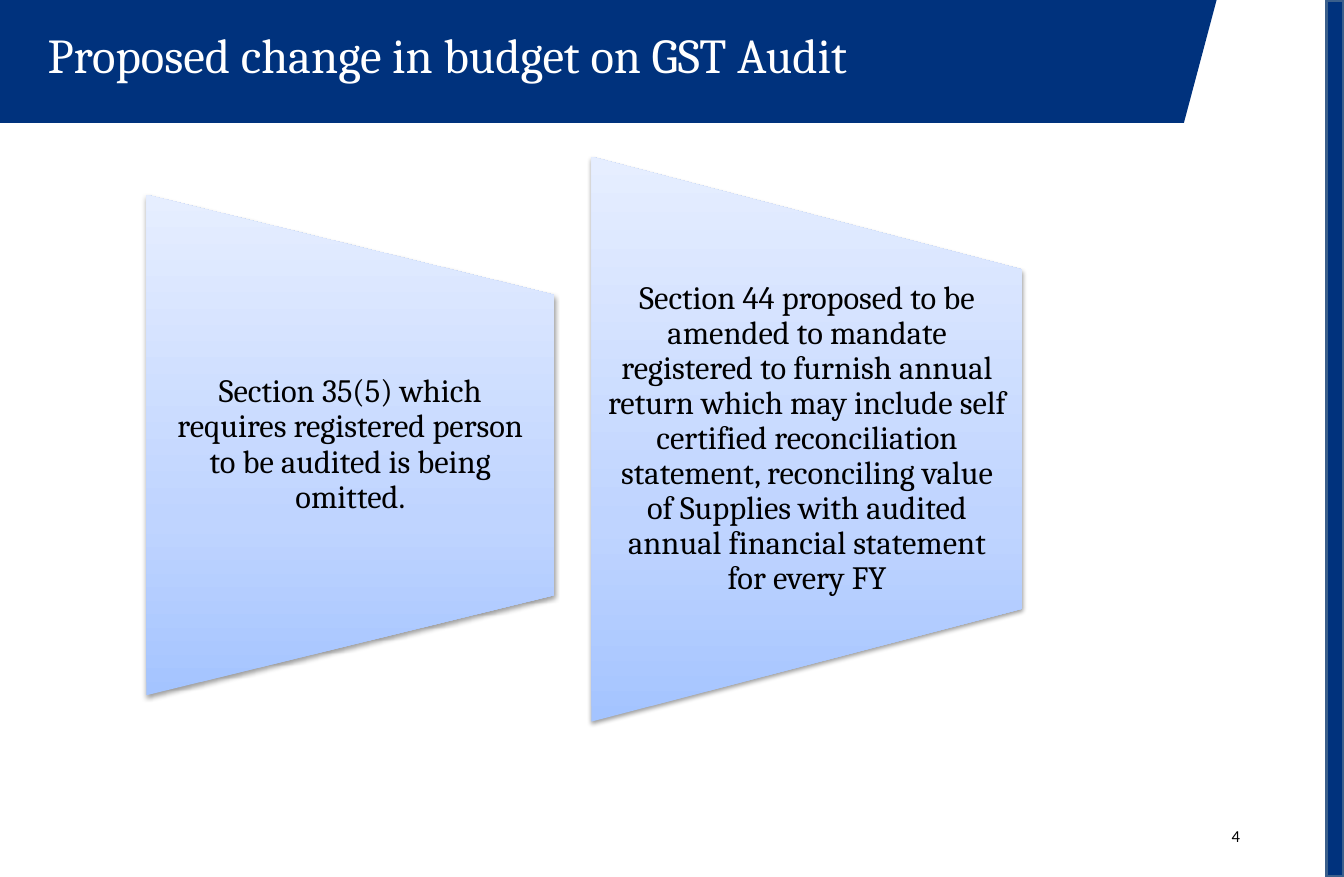
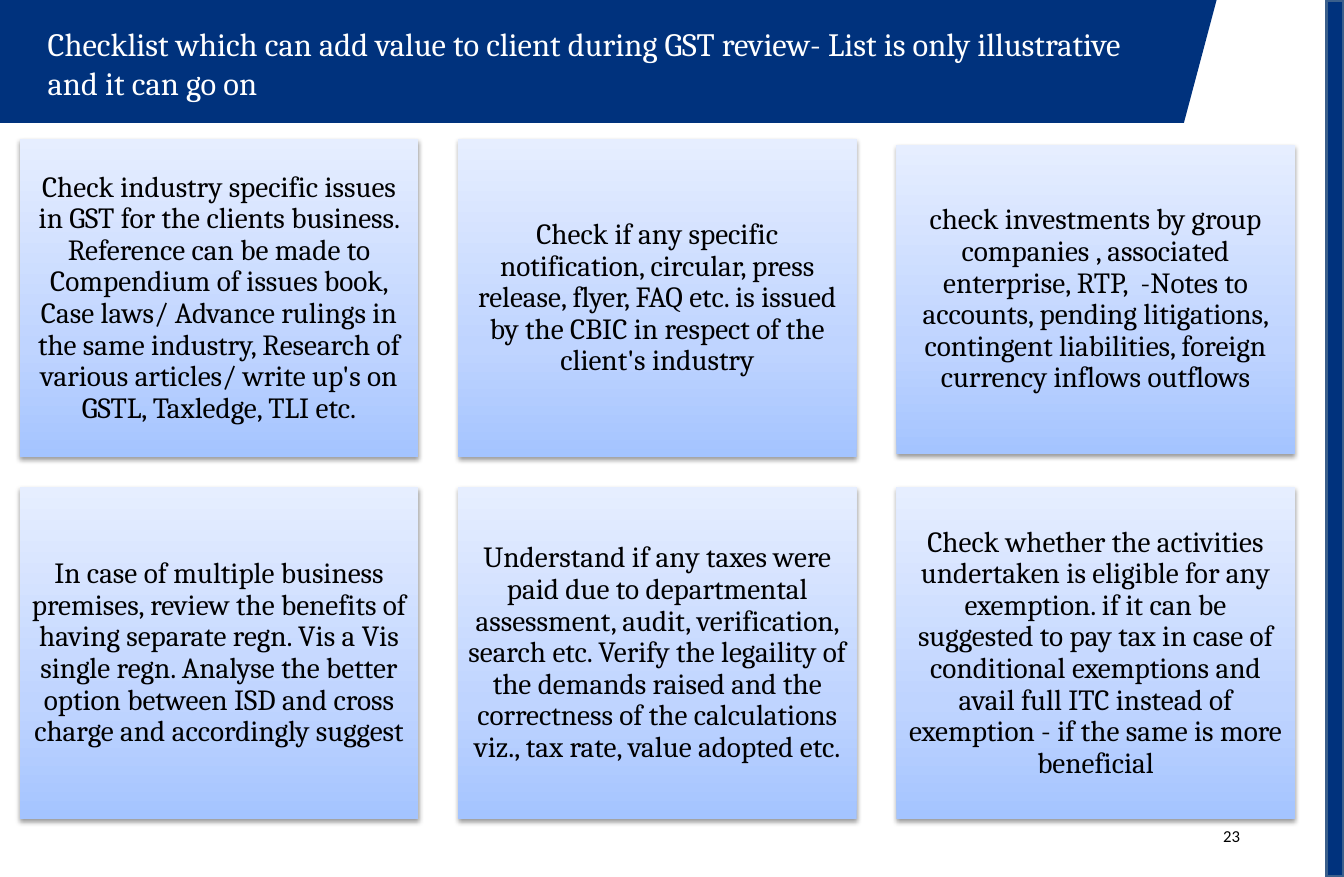
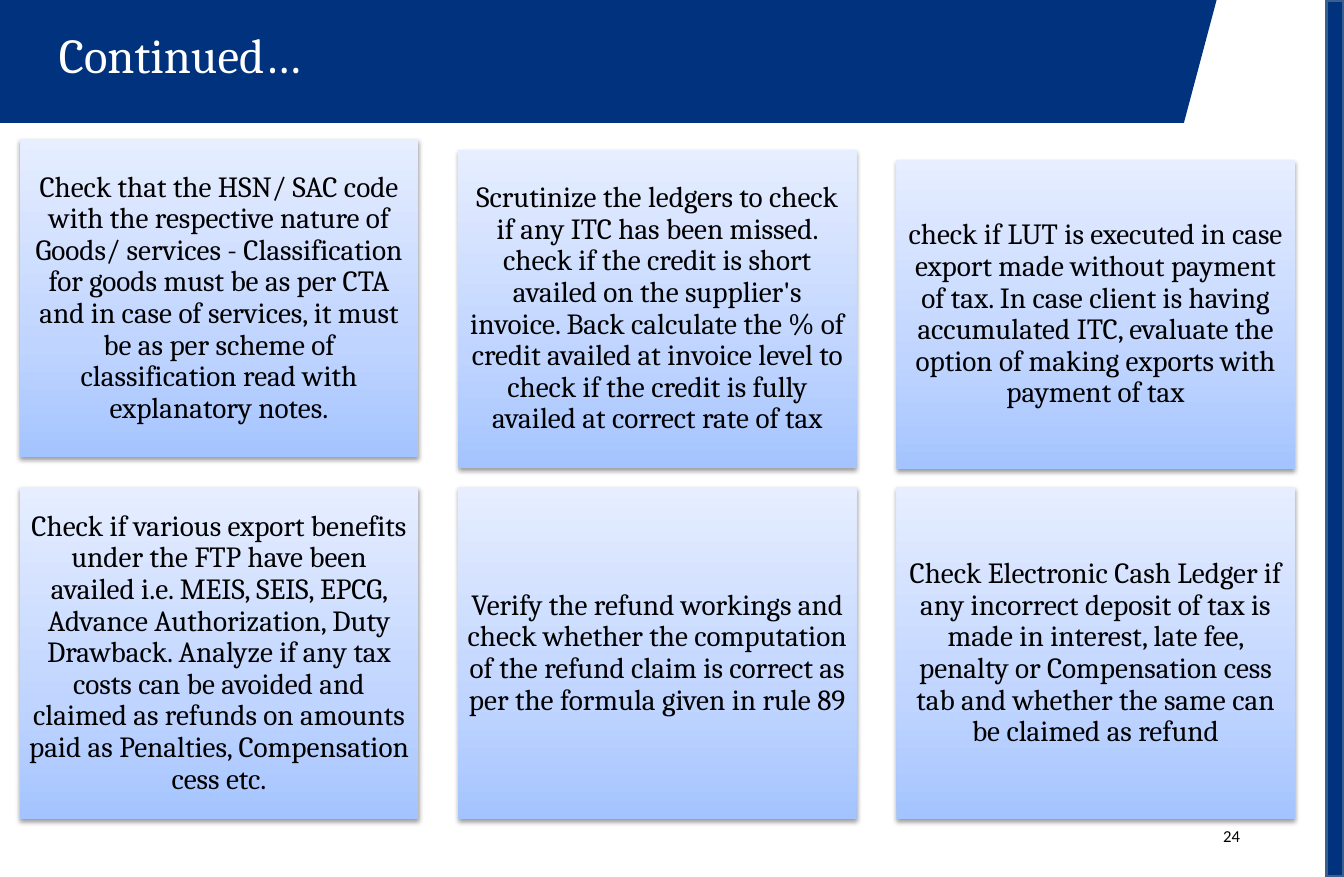
"""Build three slides on GST audit and review."""
from dataclasses import dataclass

from pptx import Presentation
from pptx.dml.color import RGBColor
from pptx.enum.shapes import MSO_SHAPE
from pptx.enum.text import MSO_ANCHOR, PP_ALIGN
from pptx.oxml import parse_xml
from pptx.oxml.ns import nsdecls
from pptx.util import Pt

RECTANGLE = MSO_SHAPE.RECTANGLE
MANUAL_OPERATION = MSO_SHAPE.FLOWCHART_MANUAL_OPERATION
TOP, MIDDLE = MSO_ANCHOR.TOP, MSO_ANCHOR.MIDDLE
LEFT, CENTER, RIGHT = PP_ALIGN.LEFT, PP_ALIGN.CENTER, PP_ALIGN.RIGHT

SLIDE_WIDTH, SLIDE_HEIGHT = 828, 540
NAVY, RAIL_EDGE, WHITE, BLACK = "00327D", "3A5F8C", "FFFFFF", "000000"
PANEL_STOPS = ((0, "A4C4FF"), (35, "BFD4FF"), (100, "E6EEFF"))
BAND_OUTLINE = ((0, 0), (0, 75.6), (729.4, 75.6), (749.5, 0))
SERIF, SANS = "Cambria", "Calibri"

COLUMNS = 3
CARD_LEFT, CARD_STEP, CARD_WIDTH = 12.2, 270, 245.5
LOWER_TOP, LOWER_HEIGHT = 300, 204.5


@dataclass(frozen=True)
class Header:
    """Title and page number of a slide."""
    title: str
    page: str
    size: float = 30
    left: float = 22.3
    width: float = 710


@dataclass(frozen=True)
class Trapezoid:
    """Panel that narrows to the right, by the box it shows in."""
    text: str
    left: float
    top: float
    width: float
    height: float


@dataclass(frozen=True)
class Card:
    """One checklist entry with its vertical extent."""
    text: str
    top: float = LOWER_TOP
    height: float = LOWER_HEIGHT


PROPOSALS = (
    Trapezoid("Section 35(5) which requires registered person to be audited is "
              "being omitted.", 90.2, 119.9, 251.3, 308.2),
    Trapezoid("Section 44 proposed to be amended to mandate registered to furnish "
              "annual return which may include self certified reconciliation "
              "statement, reconciling value of Supplies with audited annual "
              "financial statement for every FY", 364.4, 96.5, 265.7, 347.8),
)

CHECKLISTS = (
    (Header("Checklist which can add value to client during GST review- List is "
            "only illustrative and it can go on", "23", size=20), (
        Card("Check industry specific issues in GST for the clients business. "
             "Reference can be made to Compendium of issues book, Case laws/ "
             "Advance rulings in the same industry, Research of various articles/ "
             "write up's on GSTL, Taxledge, TLI etc.", 85.7, 196),
        Card("Check if any specific notification, circular, press release, flyer, "
             "FAQ etc. is issued by the CBIC in respect of the client's industry",
             85.7, 196),
        Card("check investments by group companies , associated enterprise, RTP,  "
             "-Notes to accounts, pending litigations, contingent liabilities, "
             "foreign currency inflows outflows", 89.3, 190),
        Card("In case of multiple business premises, review the benefits of having "
             "separate regn. Vis a Vis single regn. Analyse the better option "
             "between ISD and cross charge and accordingly suggest"),
        Card("Understand if any taxes were paid due to departmental assessment, "
             "audit, verification, search etc. Verify the legaility of the demands "
             "raised and the correctness of the calculations viz., tax rate, value "
             "adopted etc."),
        Card("Check whether the activities undertaken is eligible for any "
             "exemption. if it can be suggested to pay tax in case of conditional "
             "exemptions and avail full ITC instead of exemption - if the same is "
             "more beneficial"),
    )),
    (Header("Continued…", "24", left=29.1), (
        Card("Check that the HSN/ SAC code with the respective nature of Goods/ "
             "services - Classification for goods must be as per CTA and in case "
             "of services, it must be as per scheme of classification read with "
             "explanatory notes.", 85.7, 196),
        Card("Scrutinize the ledgers to check if any ITC has been missed. check if "
             "the credit is short availed on the supplier's invoice. Back "
             "calculate the % of credit availed at invoice level to check if the "
             "credit is fully availed at correct rate of tax", 92.2, 196),
        Card("check if LUT is executed in case export made without payment of tax. "
             "In case client is having accumulated ITC, evaluate the option of "
             "making exports with payment of tax", 98.6, 190),
        Card("Check if various export benefits under the FTP have been availed "
             "i.e. MEIS, SEIS, EPCG, Advance Authorization, Duty Drawback. Analyze "
             "if any tax costs can be avoided and claimed as refunds on amounts "
             "paid as Penalties, Compensation cess etc."),
        Card("Verify the refund workings and check whether the computation of the "
             "refund claim is correct as per the formula given in rule 89"),
        Card("Check Electronic Cash Ledger if any incorrect deposit of tax is made "
             "in interest, late fee, penalty or Compensation cess tab and whether "
             "the same can be claimed as refund"),
    )),
)


def rgb(value: str) -> RGBColor:
    """Turn a hex string into a colour."""
    return RGBColor.from_string(value)


def write_text(shape, text: str, *, size: float, color: str = BLACK,
               font: str = SERIF, align=LEFT, anchor=TOP,
               inset: tuple[float, float] = (7.2, 3.6), spacing: float = 1) -> None:
    """Write one formatted paragraph into a shape or text box."""
    frame = shape.text_frame
    frame.word_wrap = True
    frame.vertical_anchor = anchor
    frame.margin_left = frame.margin_right = Pt(inset[0])
    frame.margin_top = frame.margin_bottom = Pt(inset[1])
    paragraph = frame.paragraphs[0]
    paragraph.alignment = align
    paragraph.line_spacing = spacing
    run = paragraph.add_run()
    run.text = text
    run.font.name = font
    run.font.size = Pt(size)
    run.font.color.rgb = rgb(color)


def add_box(slide, left: float, top: float, width: float, height: float):
    """Add an empty text box."""
    return slide.shapes.add_textbox(Pt(left), Pt(top), Pt(width), Pt(height))


def add_panel(slide, kind, left: float, top: float, width: float, height: float):
    """Add a shape with the shared blue gradient and soft shadow."""
    panel = slide.shapes.add_shape(kind, Pt(left), Pt(top), Pt(width), Pt(height))
    stops = "".join(
        f'<a:gs pos="{position * 1000}"><a:srgbClr val="{color}"/></a:gs>'
        for position, color in PANEL_STOPS)
    properties = panel._element.spPr
    properties.append(parse_xml(
        f'<a:gradFill {nsdecls("a")} rotWithShape="0"><a:gsLst>{stops}</a:gsLst>'
        '<a:lin ang="16200000" scaled="0"/></a:gradFill>'))
    panel.line.fill.background()
    properties.append(parse_xml(
        f'<a:effectLst {nsdecls("a")}><a:outerShdw blurRad="{Pt(3.1)}" '
        f'dist="{Pt(1.6)}" dir="5400000" rotWithShape="0"><a:srgbClr val="{BLACK}">'
        '<a:alpha val="38000"/></a:srgbClr></a:outerShdw></a:effectLst>'))
    return panel


def add_frame(deck, header: Header):
    """Add a slide with its band, side rail, title and page number."""
    slide = deck.slides.add_slide(deck.slide_layouts[6])
    corners = [(Pt(x), Pt(y)) for x, y in BAND_OUTLINE]
    builder = slide.shapes.build_freeform(*corners[0])
    builder.add_line_segments(corners[1:], close=True)
    band = builder.convert_to_shape()
    band.line.fill.background()
    rail = slide.shapes.add_shape(RECTANGLE, Pt(817.2), 0, Pt(10.8), Pt(SLIDE_HEIGHT))
    rail.line.color.rgb = rgb(RAIL_EDGE)
    rail.line.width = Pt(2)
    for part in (band, rail):
        part.shadow.inherit = False
        part.fill.solid()
        part.fill.fore_color.rgb = rgb(NAVY)
    write_text(add_box(slide, header.left, 11.5, header.width, 54), header.title,
               size=header.size, color=WHITE)
    write_text(add_box(slide, 584.6, 507.6, 186.5, 14.4), header.page,
               size=10.3, font=SANS, align=RIGHT, anchor=MIDDLE, inset=(7.2, 0))
    return slide


def add_trapezoid(slide, item: Trapezoid) -> None:
    """Draw a turned manual-operation shape with upright text over it."""
    shift = (item.width - item.height) / 2
    panel = add_panel(slide, MANUAL_OPERATION, item.left + shift, item.top - shift,
                      item.height, item.width)
    panel.rotation = 270
    label = add_box(slide, item.left, item.top + item.height / 5,
                    item.width, item.height * 3 / 5)
    write_text(label, item.text, size=20, align=CENTER, anchor=MIDDLE,
               inset=(10, 0), spacing=0.9)


def add_cards(slide, cards: tuple[Card, ...]) -> None:
    """Lay the cards out in columns."""
    for index, card in enumerate(cards):
        left = CARD_LEFT + index % COLUMNS * CARD_STEP
        panel = add_panel(slide, RECTANGLE, left, card.top, CARD_WIDTH, card.height)
        write_text(panel, card.text, size=18, align=CENTER, anchor=MIDDLE,
                   inset=(5, 5), spacing=0.9)


def main() -> None:
    """Build and save the deck."""
    deck = Presentation()
    deck.slide_width, deck.slide_height = Pt(SLIDE_WIDTH), Pt(SLIDE_HEIGHT)
    slide = add_frame(deck, Header("Proposed change in budget on GST Audit", "4"))
    for proposal in PROPOSALS:
        add_trapezoid(slide, proposal)
    for header, cards in CHECKLISTS:
        add_cards(add_frame(deck, header), cards)
    deck.save("out.pptx")


if __name__ == "__main__":
    main()
